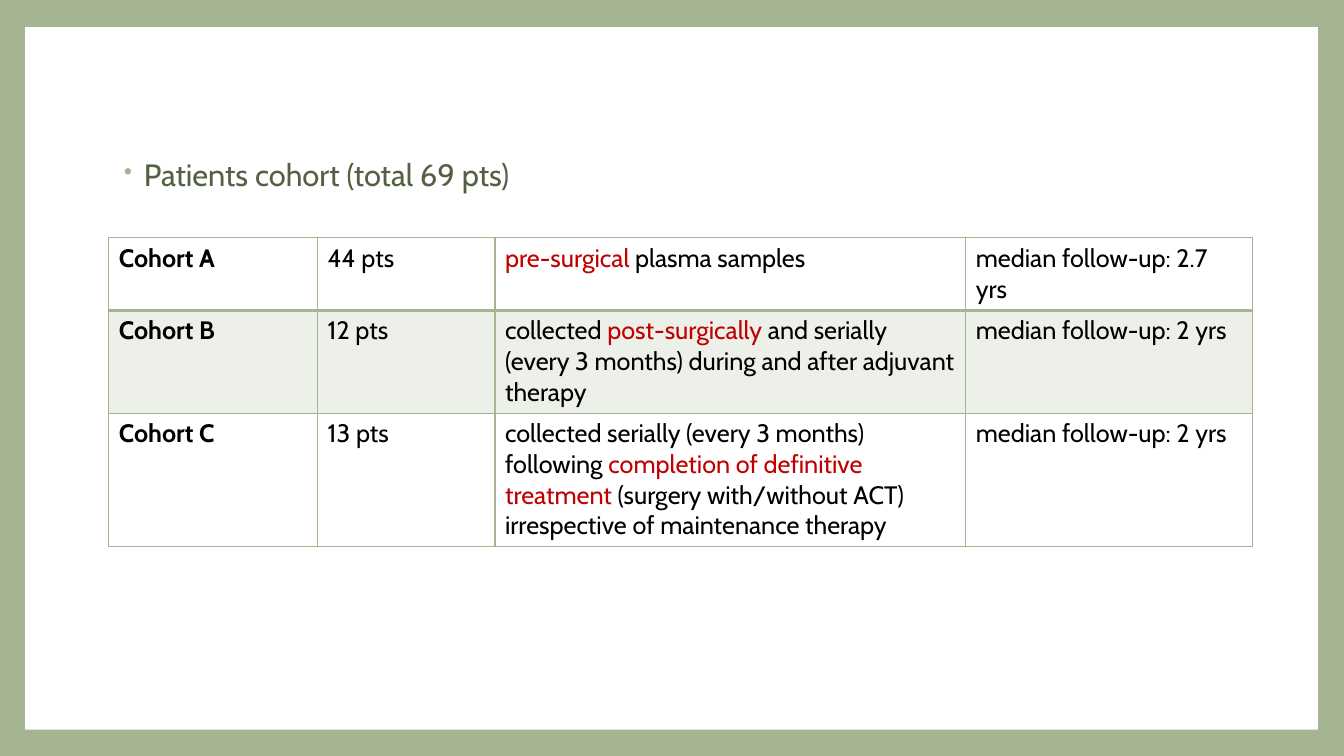
from lxml import etree
from pptx import Presentation
from pptx import util as u
from pptx.dml.color import RGBColor
from pptx.enum import shapes
from pptx.oxml import ns

COLORS = {"sage": "A5B592", "pale": "EDF0E9", "white": "FFFFFF",
          "moss": "536142", "black": "000000", "red": "C00000"}

WIDTHS = [2.07, 1.76, 4.67, 2.84]
HEIGHTS = [0.72, 1.02, 1.32]

# Text between asterisks is shown in red.
COHORTS = [
    ["Cohort A", "44 pts", "*pre-surgical* plasma samples",
     "median follow-up: 2.7 yrs"],
    ["Cohort B", "12 pts",
     "collected *post-surgically *and serially (every 3 months) "
     "during and after adjuvant therapy", "median follow-up: 2 yrs"],
    ["Cohort C", "13 pts",
     "collected serially (every 3 months) following *completion of definitive "
     "treatment *(surgery with/without ACT) irrespective of maintenance therapy",
     "median follow-up: 2 yrs"],
]


def add(parent, tag, **attrs):
    return etree.SubElement(parent, ns.qn(tag), attrs)


class Deck:
    font = "Cabin"

    def __init__(self, width, height):
        self.prs = Presentation()
        self.prs.slide_width = u.Inches(width)
        self.prs.slide_height = u.Inches(height)
        self.slide = self.prs.slides.add_slide(self.prs.slide_layouts[6])

    def color(self, name):
        return RGBColor.from_string(COLORS[name])

    def paint(self, fill, name):
        fill.solid()
        fill.fore_color.rgb = self.color(name)

    def style(self, para, size, bold=False):
        para.font.name = self.font
        para.font.size = u.Pt(size)
        para.font.bold = bold

    def panel(self, *box):
        shape = self.slide.shapes.add_shape(
            shapes.MSO_SHAPE.RECTANGLE, *map(u.Inches, box))
        shape.shadow.inherit = False
        self.paint(shape.fill, "white")
        shape.line.fill.background()

    def bullet(self, words, *box):
        frame = self.slide.shapes.add_textbox(*map(u.Inches, box)).text_frame
        frame.word_wrap = True
        para = frame.paragraphs[0]
        para.text = words
        para.line_spacing = 0.9
        para.space_before = u.Pt(14)
        self.style(para, 22)
        para.font.color.rgb = self.color("moss")
        props = para._p.get_or_add_pPr()
        props.set("marL", str(u.Inches(0.25)))
        props.set("indent", str(u.Inches(-0.2)))
        mark = etree.Element(ns.qn("a:buClr"))
        add(mark, "a:srgbClr", val=COLORS["sage"])
        size = etree.Element(ns.qn("a:buSzPct"), val="80000")
        char = etree.Element(ns.qn("a:buChar"), char="•")
        props.find(ns.qn("a:defRPr")).addprevious(mark)
        mark.addnext(size)
        size.addnext(char)

    def border(self, cell, **sides):
        """Draw cell edges; each side (L, R, T, B) gives its width in points."""
        props = cell._tc.get_or_add_tcPr()
        for side, width in sides.items():
            line = add(props, "a:ln" + side, w=str(u.Pt(width)))
            add(add(line, "a:solidFill"), "a:srgbClr", val=COLORS["sage"])

    def rich(self, para, words):
        for i, part in enumerate(words.split("*")):
            if part:
                run = para.add_run()
                run.text = part
                run.font.color.rgb = self.color("red" if i % 2 else "black")

    def table(self, rows, left, top):
        box = (left, top, sum(WIDTHS), sum(HEIGHTS))
        grid = self.slide.shapes.add_table(
            len(rows), len(WIDTHS), *map(u.Inches, box)).table
        grid.first_row = grid.horz_banding = False
        for col, width in zip(grid.columns, WIDTHS):
            col.width = u.Inches(width)
        for r, row in enumerate(rows):
            grid.rows[r].height = u.Inches(HEIGHTS[r])
            for c, words in enumerate(row):
                cell = grid.cell(r, c)
                para = cell.text_frame.paragraphs[0]
                self.style(para, 18, bold=c == 0)
                self.rich(para, words)
                self.border(cell, L=1, R=1, T=2 if r == 1 else 1,
                            B=2 if r == 0 else 1)
                self.paint(cell.fill, "pale" if r % 2 else "white")


def main():
    deck = Deck(13.33, 7.5)
    deck.paint(deck.slide.background.fill, "sage")
    deck.panel(0.25, 0.27, 12.82, 6.97)
    deck.bullet("Patients cohort (total 69 pts)", 1.08, 1.54, 10.8, 4.42)
    deck.table(COHORTS, 1.08, 2.36)
    deck.prs.save("out.pptx")


if __name__ == "__main__":
    main()
